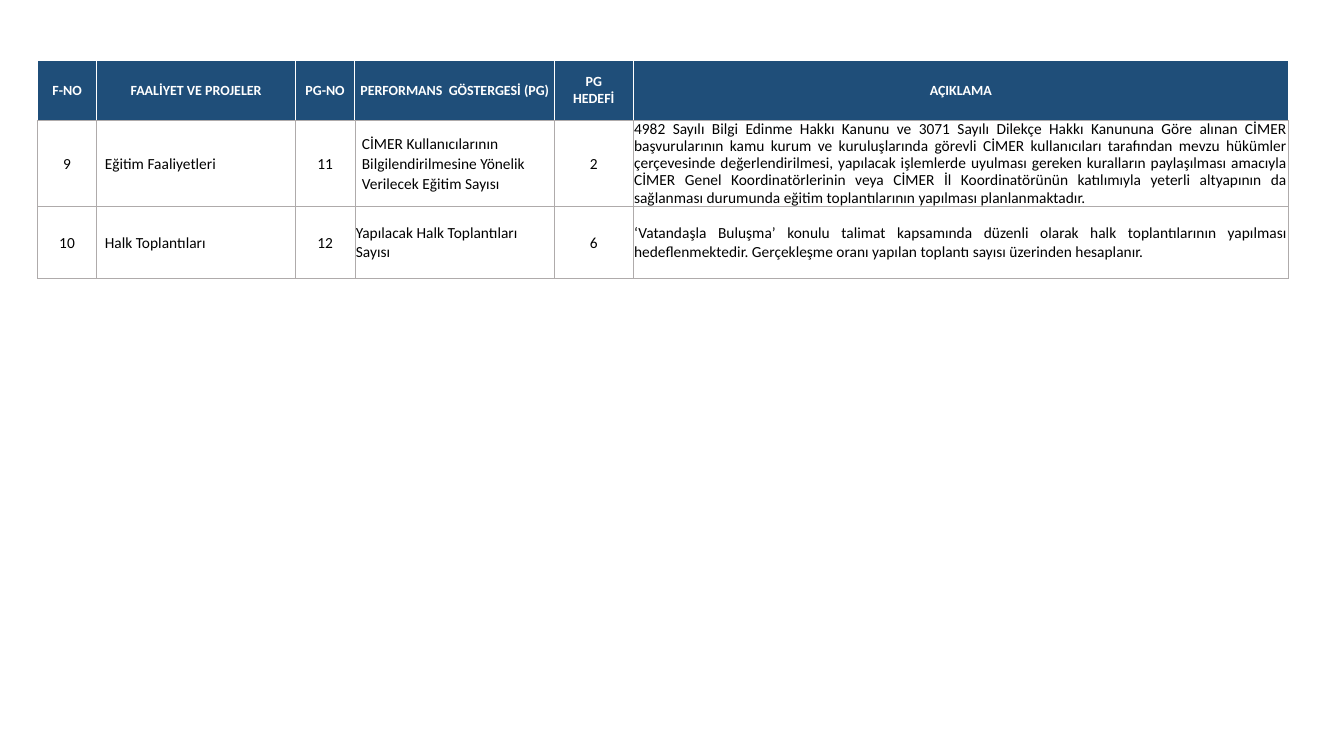
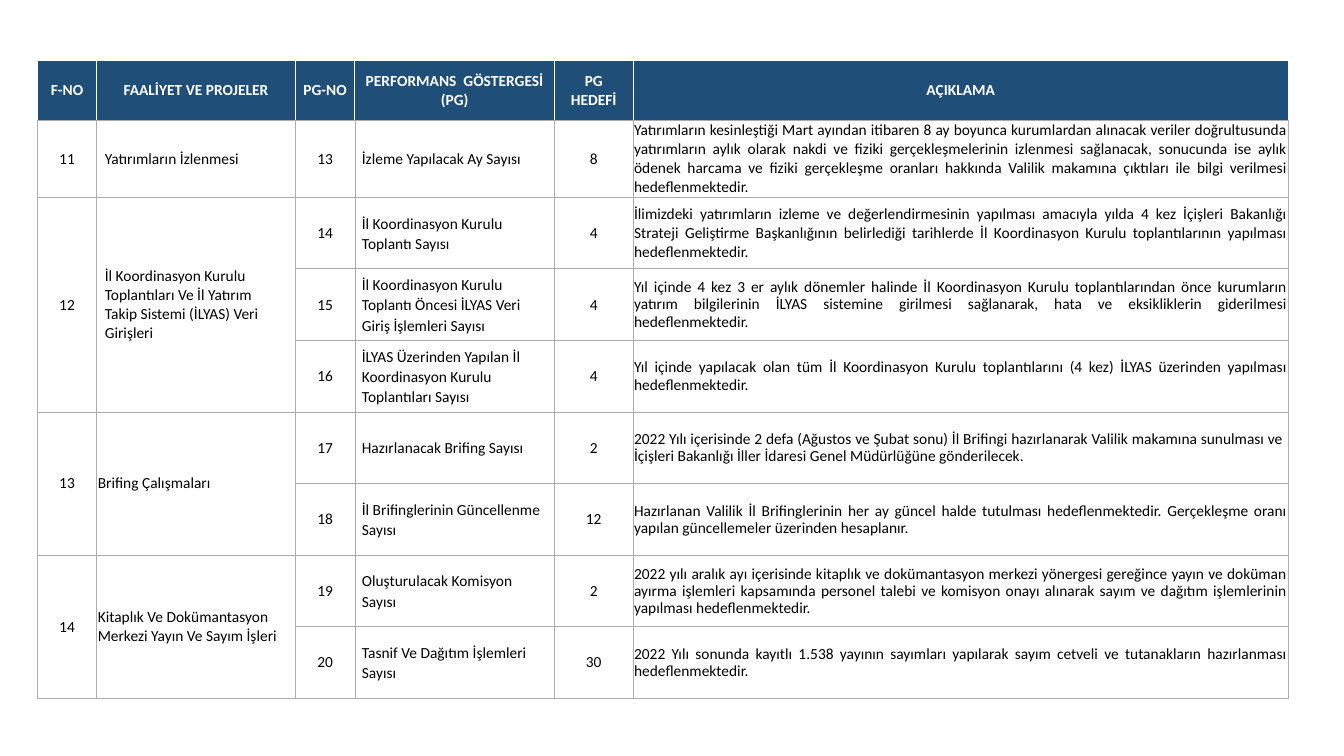
"""Build two slides of an activity and performance indicator plan."""
from dataclasses import dataclass

from lxml.etree import SubElement
from pptx import Presentation
from pptx.dml.color import RGBColor
from pptx.enum.text import MSO_ANCHOR as Anchor, PP_ALIGN as Align
from pptx.oxml.ns import qn
from pptx.util import Pt

EMU_PER_PX = 9144
HEADINGS = ("F-NO", "FAALİYET VE PROJELER", "PG-NO",
            "PERFORMANS  GÖSTERGESİ (PG)", "PG\vHEDEFİ", "AÇIKLAMA")


def px(length):
    return length * EMU_PER_PX


@dataclass(frozen=True)
class Theme:
    font: str = "Calibri"
    header_fill: str = "1F4E79"
    header_text: str = "FFFFFF"
    body_text: str = "000000"
    grid: str = "AFABAB"
    body_size: int = 11
    header_rule: float = 1
    inner_rule: float = 0.5
    outer_rule: float = 0.25
    tight_inset: int = 1
    indicator_inset: int = 7
    activity_inset: int = 8
    indicator_spacing: float = 1.07
    note_spacing: float = 0.9


THEME = Theme()


@dataclass(frozen=True)
class Indicator:
    number: str
    name: str
    target: str
    note: str
    inset: int = THEME.indicator_inset
    name_spacing: float = THEME.indicator_spacing
    note_spacing: float = THEME.note_spacing


@dataclass(frozen=True)
class Activity:
    number: str
    name: str
    indicators: tuple
    inset: int = THEME.activity_inset
    gap: int = 0


class PlanDeck:
    left, top = 37, 60
    columns = (59, 197, 59, 198, 78, 650)
    header_height, row_height = 59, 71

    def __init__(self, theme):
        self.theme = theme
        self.presentation = Presentation()
        self.presentation.slide_width = px(1333)
        self.presentation.slide_height = px(750)
        self.slide = None

    def add_slide(self):
        layout = self.presentation.slide_layouts[6]
        self.slide = self.presentation.slides.add_slide(layout)

    def add_plan(self, activities, header_size):
        row_count = sum(len(activity.indicators) for activity in activities)
        height = self.header_height + row_count * self.row_height
        table = self.slide.shapes.add_table(
            row_count + 1, len(self.columns), px(self.left), px(self.top),
            px(sum(self.columns)), px(height)).table
        table.horz_banding = False
        for column, width in zip(table.columns, self.columns):
            column.width = px(width)
        for index, row in enumerate(table.rows):
            row.height = px(self.row_height if index else self.header_height)
            for position, cell in enumerate(row.cells):
                self.style_cell(cell, position, header=index == 0)
        for cell, heading in zip(table.rows[0].cells, HEADINGS):
            self.set_text(cell, heading, size=header_size, bold=True,
                          color=self.theme.header_text)
        first = 1
        for activity in activities:
            self.add_activity(table, first, activity)
            first += len(activity.indicators)

    def add_activity(self, table, first, activity):
        last = first + len(activity.indicators) - 1
        for column in (0, 1):
            if last > first:
                table.cell(first, column).merge(table.cell(last, column))
        self.set_text(table.cell(first, 0), activity.number)
        self.set_text(table.cell(first, 1), activity.name, Align.LEFT, activity.inset)
        for row, indicator in enumerate(activity.indicators, first):
            gap = activity.gap
            self.set_text(table.cell(row, 2), indicator.number, gap=gap)
            self.set_text(table.cell(row, 3), indicator.name, Align.LEFT,
                          indicator.inset, indicator.name_spacing, gap)
            self.set_text(table.cell(row, 4), indicator.target, gap=gap)
            self.set_text(table.cell(row, 5), indicator.note, Align.JUSTIFY,
                          spacing=indicator.note_spacing, gap=gap)

    def style_cell(self, cell, position, header):
        theme = self.theme
        outer = (theme.grid, theme.outer_rule)
        inner = (theme.grid, theme.inner_rule)
        if header:
            cell.fill.solid()
            cell.fill.fore_color.rgb = RGBColor.from_string(theme.header_fill)
            white = (theme.header_text, theme.header_rule)
            rules = (white, white, white, outer)
        else:
            cell.fill.background()
            left = inner if position else outer
            right = inner if position < len(self.columns) - 1 else outer
            rules = (left, right, outer, outer)
        self.add_borders(cell, rules)

    def add_borders(self, cell, rules):
        properties = cell._tc.get_or_add_tcPr()
        for index, (edge, (color, width)) in enumerate(zip("LRTB", rules)):
            line = SubElement(properties, qn(f"a:ln{edge}"), w=str(Pt(width)))
            fill = SubElement(line, qn("a:solidFill"))
            SubElement(fill, qn("a:srgbClr"), val=color)
            properties.insert(index, line)

    def set_text(self, cell, text, align=Align.CENTER, inset=THEME.tight_inset,
                 spacing=1.0, gap=0, size=THEME.body_size, bold=False,
                 color=THEME.body_text):
        cell.vertical_anchor = Anchor.MIDDLE
        cell.margin_left = cell.margin_right = px(inset)
        cell.margin_top, cell.margin_bottom = px(self.theme.tight_inset), 0
        paragraph = cell.text_frame.paragraphs[0]
        paragraph.text = text
        paragraph.alignment = align
        paragraph.line_spacing = spacing
        paragraph.space_before = paragraph.space_after = Pt(gap)
        font = paragraph.font
        font.name, font.size, font.bold = self.theme.font, Pt(size), bold
        font.color.rgb = RGBColor.from_string(color)


TRAINING_AND_MEETINGS = (
    Activity("9", "Eğitim Faaliyetleri", (
        Indicator(
            "11", "CİMER Kullanıcılarının Bilgilendirilmesine Yönelik Verilecek Eğitim Sayısı", "2",
            "4982 Sayılı Bilgi Edinme Hakkı Kanunu ve 3071 Sayılı Dilekçe Hakkı Kanununa Göre "
            "alınan CİMER başvurularının kamu kurum ve kuruluşlarında görevli CİMER kullanıcıları "
            "tarafından mevzu hükümler çerçevesinde değerlendirilmesi, yapılacak işlemlerde "
            "uyulması gereken kuralların paylaşılması amacıyla CİMER Genel Koordinatörlerinin "
            "veya CİMER İl Koordinatörünün katılımıyla yeterli altyapının da sağlanması "
            "durumunda eğitim toplantılarının yapılması planlanmaktadır."),
    )),
    Activity("10", "Halk Toplantıları", (
        Indicator(
            "12", "Yapılacak Halk Toplantıları Sayısı", "6",
            "‘Vatandaşla Buluşma’ konulu talimat kapsamında düzenli olarak halk toplantılarının "
            "yapılması hedeflenmektedir. Gerçekleşme oranı yapılan toplantı sayısı üzerinden "
            "hesaplanır.",
            inset=THEME.tight_inset, name_spacing=1.0, note_spacing=1.0),
    )),
)

INVESTMENT_AND_RECORDS = (
    Activity("11", "Yatırımların İzlenmesi", (
        Indicator(
            "13", "İzleme Yapılacak Ay Sayısı", "8",
            "Yatırımların kesinleştiği Mart ayından itibaren 8 ay boyunca kurumlardan alınacak "
            "veriler doğrultusunda yatırımların aylık olarak nakdi ve fiziki gerçekleşmelerinin "
            "izlenmesi sağlanacak, sonucunda ise aylık ödenek harcama ve fiziki gerçekleşme "
            "oranları hakkında Valilik makamına çıktıları ile bilgi verilmesi hedeflenmektedir.",
            note_spacing=1.0),
    ), gap=6),
    Activity("12", "İl Koordinasyon Kurulu Toplantıları Ve İl Yatırım Takip Sistemi (İLYAS) Veri Girişleri", (
        Indicator(
            "14", "İl Koordinasyon Kurulu Toplantı Sayısı", "4",
            "İlimizdeki yatırımların izleme ve değerlendirmesinin yapılması amacıyla yılda 4 kez "
            "İçişleri Bakanlığı Strateji Geliştirme Başkanlığının belirlediği tarihlerde İl "
            "Koordinasyon Kurulu toplantılarının yapılması hedeflenmektedir.",
            note_spacing=1.0),
        Indicator(
            "15", "İl Koordinasyon Kurulu Toplantı Öncesi İLYAS Veri Giriş İşlemleri Sayısı", "4",
            "Yıl içinde 4 kez 3 er aylık dönemler halinde İl Koordinasyon Kurulu "
            "toplantılarından önce kurumların yatırım bilgilerinin İLYAS sistemine girilmesi "
            "sağlanarak, hata ve eksikliklerin giderilmesi hedeflenmektedir."),
        Indicator(
            "16", "İLYAS Üzerinden Yapılan İl Koordinasyon Kurulu Toplantıları Sayısı", "4",
            "Yıl içinde yapılacak olan tüm İl Koordinasyon Kurulu toplantılarını (4 kez) İLYAS "
            "üzerinden yapılması hedeflenmektedir."),
    ), gap=6),
    Activity("13", "Brifing Çalışmaları", (
        Indicator(
            "17", "Hazırlanacak Brifing Sayısı", "2",
            "2022 Yılı içerisinde 2 defa (Ağustos ve Şubat sonu) İl Brifingi hazırlanarak "
            "Valilik makamına sunulması ve  İçişleri Bakanlığı İller İdaresi Genel Müdürlüğüne "
            "gönderilecek."),
        Indicator(
            "18", "İl Brifinglerinin Güncellenme Sayısı", "12",
            "Hazırlanan Valilik İl Brifinglerinin her ay güncel halde tutulması "
            "hedeflenmektedir. Gerçekleşme oranı yapılan güncellemeler üzerinden hesaplanır."),
    ), inset=THEME.tight_inset),
    Activity("14", "Kitaplık Ve Dokümantasyon Merkezi Yayın Ve Sayım İşleri", (
        Indicator(
            "19", "Oluşturulacak Komisyon Sayısı", "2",
            "2022 yılı aralık ayı içerisinde kitaplık ve dokümantasyon merkezi yönergesi "
            "gereğince yayın ve doküman ayırma işlemleri kapsamında personel talebi ve komisyon "
            "onayı alınarak sayım ve dağıtım işlemlerinin yapılması hedeflenmektedir."),
        Indicator(
            "20", "Tasnif Ve Dağıtım İşlemleri Sayısı", "30",
            "2022 Yılı sonunda kayıtlı 1.538 yayının sayımları yapılarak sayım cetveli ve "
            "tutanakların hazırlanması hedeflenmektedir."),
    ), inset=THEME.tight_inset),
)


def main():
    deck = PlanDeck(THEME)
    for activities, header_size in ((TRAINING_AND_MEETINGS, 10), (INVESTMENT_AND_RECORDS, 11)):
        deck.add_slide()
        deck.add_plan(activities, header_size)
    deck.presentation.save("out.pptx")


if __name__ == "__main__":
    main()
